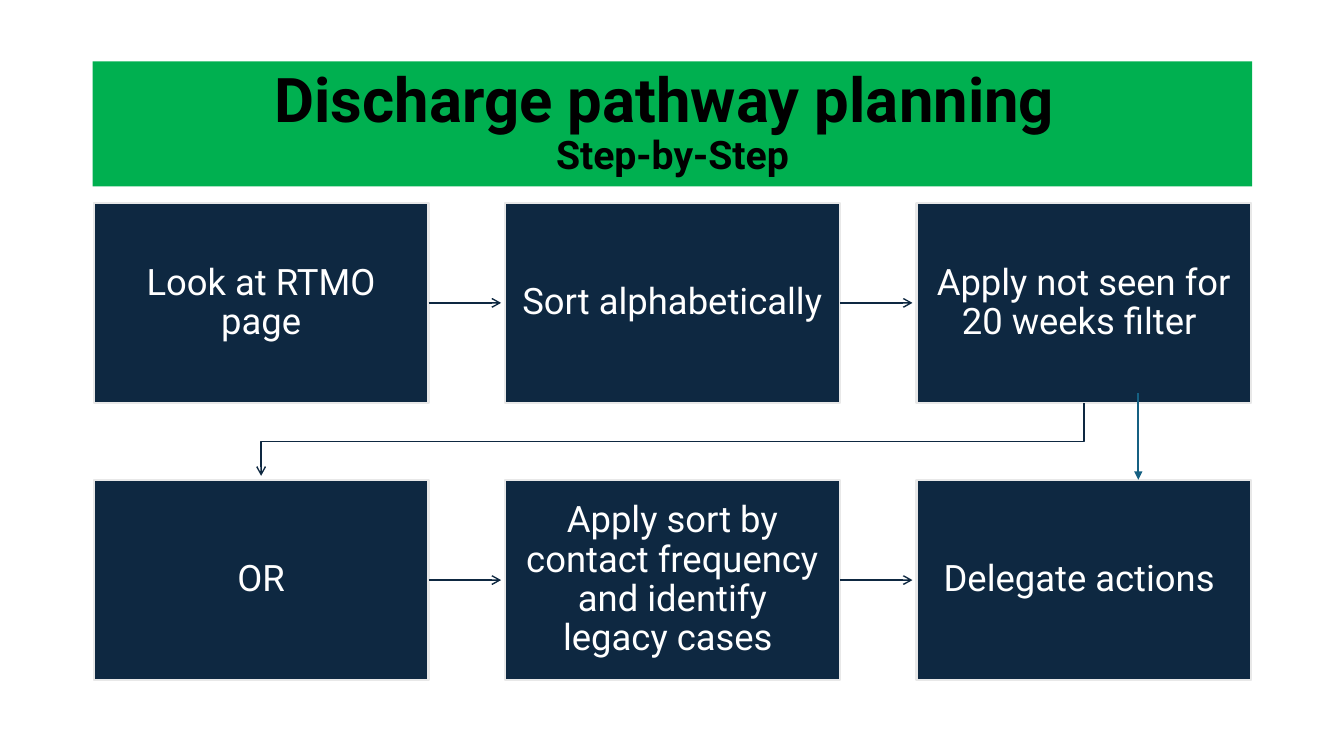
"""Build a slide showing the six steps of discharge pathway planning."""
from itertools import pairwise

from lxml.etree import SubElement
from pptx import Presentation
from pptx.dml.color import RGBColor
from pptx.enum.shapes import MSO_CONNECTOR as Connector, MSO_SHAPE as Shape
from pptx.enum.text import MSO_ANCHOR as Anchor, PP_ALIGN as Align
from pptx.oxml.ns import qn
from pptx.util import Inches, Pt

TITLE = "Discharge pathway planning "
SUBTITLE = "Step-by-Step"
STEPS = [
    ["Look at RTMO page", "Sort alphabetically", "Apply not seen for 20 weeks filter "],
    ["OR", "Apply sort by contact frequency and identify legacy cases ", "Delegate actions "],
]

THEME = {
    "font": "Roboto",
    "banner": "00B050",
    "title": "000000",
    "box": "0E2841",
    "border": "E8E8E8",
    "step": "FFFFFF",
    "flow": "0E2841",
    "shortcut": "156082",
    "title_size": 44,
    "subtitle_size": 28,
    "step_size": 26,
}

BANNER = (0.92, 0.61, 11.5, 1.24)
LEFT, TOP = 0.93, 2.01
BOX_WIDTH, BOX_HEIGHT = 3.32, 1.99
COLUMN_PITCH, ROW_PITCH = 4.08, 2.75
ARROW_GAP = 0.04
SHORTCUT_X, SHORTCUT_START = 11.29, 3.9
STEP_FRAME = {
    "margin_left": Inches(0.16),
    "margin_right": Inches(0.16),
    "margin_top": Inches(0.17),
    "margin_bottom": Inches(0.17),
}


def color(name):
    return RGBColor.from_string(THEME[name])


def add_box(slide, bounds, fill, frame_format):
    shape = slide.shapes.add_shape(Shape.RECTANGLE, *map(Inches, bounds))
    shape.shadow.inherit = False
    shape.fill.solid()
    shape.fill.fore_color.rgb = color(fill)
    shape.line.fill.background()
    frame = shape.text_frame
    for name, value in {"word_wrap": True, "vertical_anchor": Anchor.MIDDLE, **frame_format}.items():
        setattr(frame, name, value)
    paragraph = frame.paragraphs[0]
    for name, value in {"alignment": Align.CENTER, "line_spacing": 0.9}.items():
        setattr(paragraph, name, value)
    return shape


def add_text(shape, text, size, ink, bold=False):
    run = shape.text_frame.paragraphs[0].add_run()
    run.text = text
    for name, value in {"name": THEME["font"], "size": Pt(THEME[size]), "bold": bold}.items():
        setattr(run.font, name, value)
    run.font.color.rgb = color(ink)


def style_arrow(shape, ink, width, head):
    shape.line.color.rgb = color(ink)
    shape.line.width = Pt(width)
    properties = shape.element.spPr
    SubElement(properties.find(qn("a:ln")), qn("a:tailEnd"), type=head)
    if properties.find(qn("a:effectLst")) is None:
        SubElement(properties, qn("a:effectLst"))


def add_arrow(slide, start, end, ink="flow", width=1, head="arrow"):
    ends = map(Inches, (*start, *end))
    style_arrow(slide.shapes.add_connector(Connector.STRAIGHT, *ends), ink, width, head)


def add_return_arrow(slide, points):
    start, *rest = [tuple(map(Inches, point)) for point in points]
    builder = slide.shapes.build_freeform(*start)
    builder.add_line_segments(rest, close=False)
    shape = builder.convert_to_shape()
    shape.fill.background()
    shape.shadow.inherit = False
    style_arrow(shape, "flow", 1, "arrow")


def add_banner(slide):
    banner = add_box(slide, BANNER, "banner", {})
    add_text(banner, TITLE, "title_size", "title", bold=True)
    banner.text_frame.paragraphs[0].add_line_break()
    add_text(banner, SUBTITLE, "subtitle_size", "title", bold=True)


def add_steps(slide):
    columns = [LEFT + index * COLUMN_PITCH for index in range(len(STEPS[0]))]
    rows = [TOP + index * ROW_PITCH for index in range(len(STEPS))]
    for top, labels in zip(rows, STEPS):
        for left, label in zip(columns, labels):
            box = add_box(slide, (left, top, BOX_WIDTH, BOX_HEIGHT), "box", STEP_FRAME)
            box.line.color.rgb = color("border")
            box.line.width = Pt(1.5)
            add_text(box, label, "step_size", "step")
        middle = top + BOX_HEIGHT / 2
        for left, following in pairwise(columns):
            add_arrow(slide, (left + BOX_WIDTH, middle), (following - ARROW_GAP, middle))

    first_center, last_center = (left + BOX_WIDTH / 2 for left in (columns[0], columns[-1]))
    bottom = rows[0] + BOX_HEIGHT
    turn = (bottom + rows[1]) / 2
    add_return_arrow(slide, [
        (last_center, bottom),
        (last_center, turn),
        (first_center, turn),
        (first_center, rows[1] - ARROW_GAP),
    ])
    add_arrow(slide, (SHORTCUT_X, SHORTCUT_START), (SHORTCUT_X, rows[1]), "shortcut", 1.5, "triangle")


def main():
    presentation = Presentation()
    presentation.slide_width = Inches(13.33)
    presentation.slide_height = Inches(7.5)
    slide = presentation.slides.add_slide(presentation.slide_layouts[6])
    add_banner(slide)
    add_steps(slide)
    presentation.save("out.pptx")


if __name__ == "__main__":
    main()
